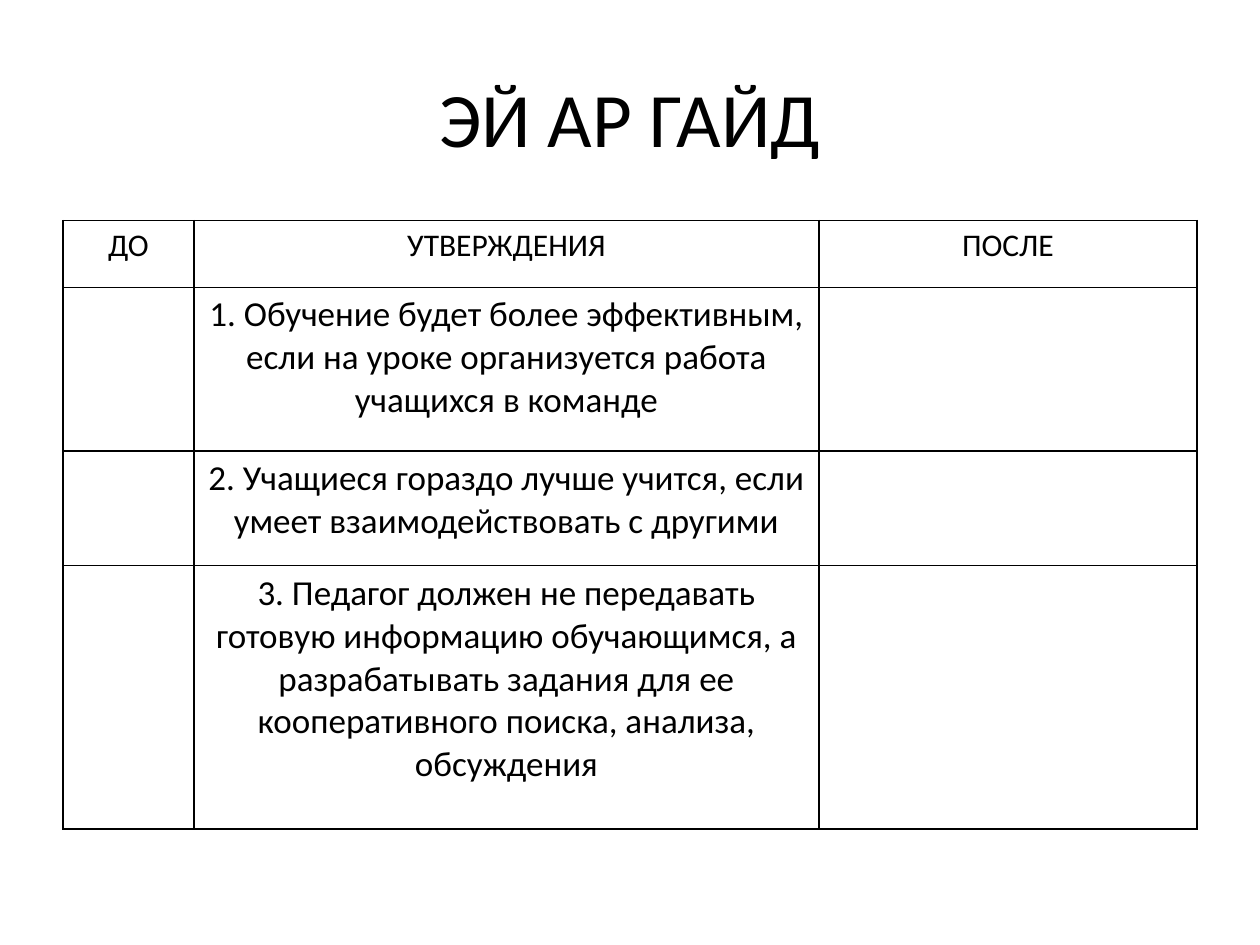
"""Build a slide with a before-and-after anticipation guide table."""
from lxml.etree import SubElement
from pptx import Presentation
from pptx.dml.color import RGBColor
from pptx.enum.text import MSO_ANCHOR as Anchor, PP_ALIGN as Align
from pptx.oxml.ns import qn
from pptx.util import Inches, Pt

TITLE = "ЭЙ АР ГАЙД"
HEADERS = ["ДО", "УТВЕРЖДЕНИЯ", "ПОСЛЕ"]
STATEMENTS = [
    "1. Обучение будет более эффективным, если на уроке организуется работа учащихся в команде",
    "2. Учащиеся гораздо лучше учится, если умеет взаимодействовать с другими",
    "3. Педагог должен не передавать готовую информацию обучающимся, а разрабатывать задания "
    "для ее кооперативного поиска, анализа, обсуждения",
]
COLUMN_WIDTHS = [1.04, 4.96, 3]
ROW_HEIGHTS = [0.53, 1.3, 0.91, 2.09]
LEFT, WIDTH = 0.5, 9
COLORS = {"text": "000000", "border": "000000", "background": "FFFFFF"}
FONT = "Calibri"


def write_text(text_frame, text, size):
    text_frame.text = text
    paragraph = text_frame.paragraphs[0]
    paragraph.alignment = Align.CENTER
    for run in paragraph.runs:
        run.font.name = FONT
        run.font.size = Pt(size)
        run.font.color.rgb = RGBColor.from_string(COLORS["text"])


def add_borders(cell):
    properties = cell._tc.get_or_add_tcPr()
    for side in ("lnL", "lnR", "lnT", "lnB"):
        line = SubElement(properties, qn(f"a:{side}"), w=str(Pt(1)))
        fill = SubElement(line, qn("a:solidFill"))
        SubElement(fill, qn("a:srgbClr"), val=COLORS["border"])


def add_title(slide):
    title = slide.shapes.add_textbox(Inches(LEFT), Inches(0.3), Inches(WIDTH), Inches(1.25))
    title.text_frame.word_wrap = True
    title.text_frame.vertical_anchor = Anchor.MIDDLE
    write_text(title.text_frame, TITLE, 44)


def add_guide_table(slide):
    rows = [HEADERS] + [["", statement, ""] for statement in STATEMENTS]
    table = slide.shapes.add_table(
        len(rows), len(HEADERS), Inches(LEFT), Inches(1.75), Inches(WIDTH), Inches(sum(ROW_HEIGHTS))
    ).table
    table.first_row = table.horz_banding = False
    for column, width in zip(table.columns, COLUMN_WIDTHS):
        column.width = Inches(width)
    for row_index, (row, height, texts) in enumerate(zip(table.rows, ROW_HEIGHTS, rows)):
        row.height = Inches(height)
        for cell, text in zip(row.cells, texts):
            add_borders(cell)
            cell.fill.background()
            write_text(cell.text_frame, text, 20 if row_index else 18)


def main():
    presentation = Presentation()
    presentation.slide_width, presentation.slide_height = Inches(10), Inches(7.5)
    slide = presentation.slides.add_slide(presentation.slide_layouts[6])
    slide.background.fill.solid()
    slide.background.fill.fore_color.rgb = RGBColor.from_string(COLORS["background"])
    add_title(slide)
    add_guide_table(slide)
    presentation.save("out.pptx")


if __name__ == "__main__":
    main()
